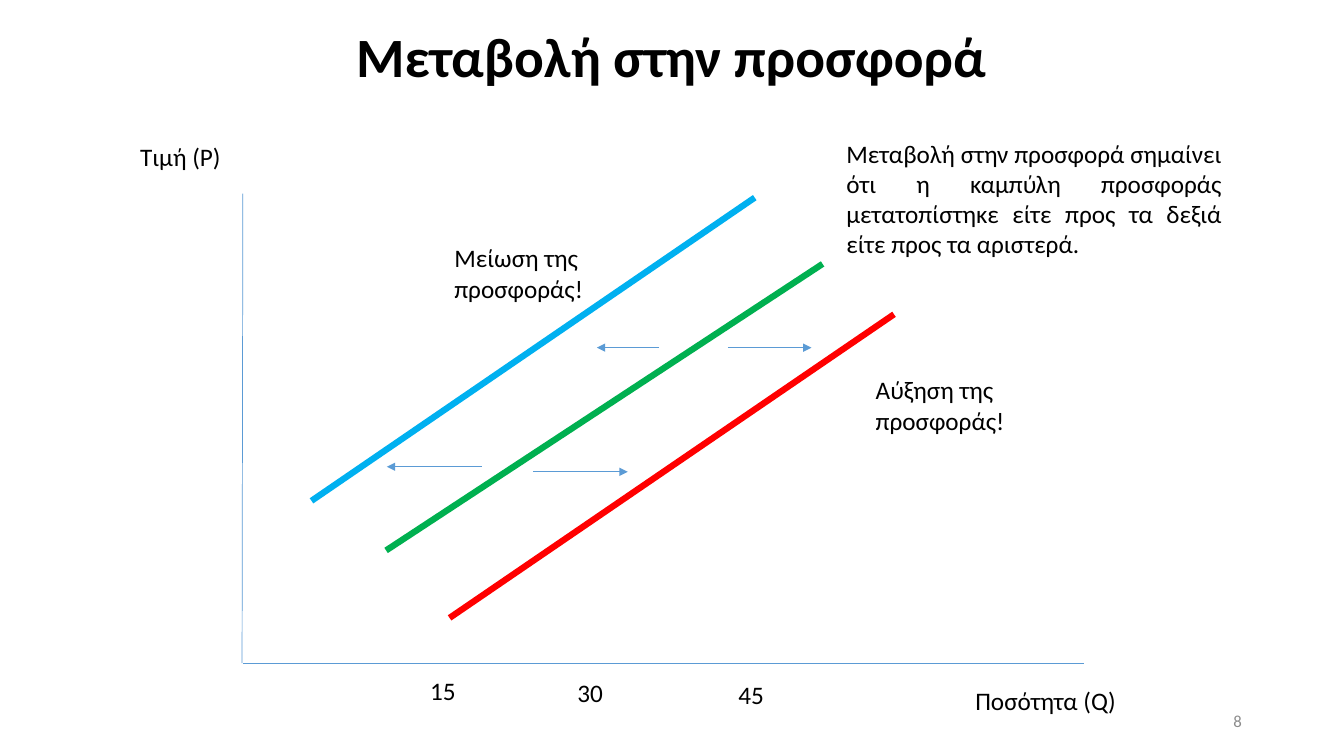
from lxml.etree import SubElement
from pptx import Presentation
from pptx.dml.color import RGBColor
from pptx.enum.shapes import MSO_CONNECTOR
from pptx.enum.text import MSO_ANCHOR, MSO_AUTO_SIZE, PP_ALIGN
from pptx.oxml.ns import qn
from pptx.util import Cm, Pt

BLACK = RGBColor(0x00, 0x00, 0x00)
GRAY = RGBColor(0x8C, 0x8C, 0x8C)
AXIS_BLUE = RGBColor(0x5B, 0x9B, 0xD5)
BLUE = RGBColor(0x00, 0xB0, 0xF0)
GREEN = RGBColor(0x00, 0xB0, 0x50)
RED = RGBColor(0xFF, 0x00, 0x00)


def add_text(s, text, left, top, width, height, size=18, color=BLACK, bold=False,
             align=PP_ALIGN.LEFT, anchor=MSO_ANCHOR.TOP, wrap=True):
    tf = s.shapes.add_textbox(Cm(left), Cm(top), Cm(width), Cm(height)).text_frame
    tf.text = text
    tf.word_wrap = wrap
    tf.auto_size = MSO_AUTO_SIZE.NONE
    tf.vertical_anchor = anchor
    p = tf.paragraphs[0]
    p.alignment = align
    font = p.runs[0].font
    font.name = "Calibri"
    font.size = Pt(size)
    font.bold = bold
    font.color.rgb = color
    return p


def add_line(s, x1, y1, x2, y2, color=AXIS_BLUE, width=0.5):
    line = s.shapes.add_connector(MSO_CONNECTOR.STRAIGHT, Cm(x1), Cm(y1), Cm(x2), Cm(y2))
    line.line.color.rgb = color
    line.line.width = Pt(width)
    SubElement(line._element.spPr, qn("a:effectLst"))
    return line


def add_arrow(s, x1, x2, y):
    arrow = add_line(s, x1, y, x2, y)
    SubElement(arrow.line._get_or_add_ln(), qn("a:tailEnd"), type="triangle")


def add_axes(s):
    add_line(s, 6.12, 4.88, 6.1, 16.71)
    add_line(s, 27.31, 16.71, 6.12, 16.71)
    add_text(s, "Τιμή (P)", 3.28, 3.43, 2.84, 1.02)
    add_text(s, "Ποσότητα (Q)", 24.33, 17.15, 4.42, 1.02)
    for quantity, left, top in (("15", 10.59, 16.89), ("30", 14.3, 16.94), ("45", 18.36, 16.99)):
        add_text(s, quantity, left, top, 1.17, 1.02, wrap=False)


def add_supply_curves(s):
    for color, ends in (
        (GREEN, (9.73, 13.87, 20.73, 6.65)),
        (RED, (11.33, 15.57, 22.53, 7.92)),
        (BLUE, (7.85, 12.62, 19.02, 4.98)),
    ):
        add_line(s, *ends, color=color, width=4.5)
    for x1, x2, y in (
        (18.34, 20.45, 8.76),
        (13.44, 15.82, 11.89),
        (16.61, 15.04, 8.76),
        (12.14, 9.75, 11.76),
    ):
        add_arrow(s, x1, x2, y)
    add_text(s, "Αύξηση της προσφοράς!", 21.82, 9.32, 4.6, 1.8)
    add_text(s, "Μείωση της προσφοράς!", 11.2, 5.99, 4.6, 1.8)


def main():
    prs = Presentation()
    prs.slide_width = Cm(33.87)
    prs.slide_height = Cm(19.05)
    s = prs.slides.add_slide(prs.slide_layouts[6])
    title = add_text(s, "Μεταβολή στην προσφορά", 5.97, 0.64, 21.89, 1.73, size=39.6,
                     bold=True, align=PP_ALIGN.CENTER, anchor=MSO_ANCHOR.MIDDLE)
    title.line_spacing = 0.9
    add_axes(s)
    add_supply_curves(s)
    add_text(s, "Μεταβολή στην προσφορά σημαίνει ότι η καμπύλη προσφοράς "
                "μετατοπίστηκε είτε προς τα δεξιά είτε προς τα αριστερά.",
             21.08, 3.35, 9.96, 3.33, align=PP_ALIGN.JUSTIFY)
    add_text(s, "8", 23.93, 17.65, 7.62, 1.02, size=12, color=GRAY,
             align=PP_ALIGN.RIGHT, anchor=MSO_ANCHOR.MIDDLE)
    prs.save("out.pptx")


if __name__ == "__main__":
    main()
